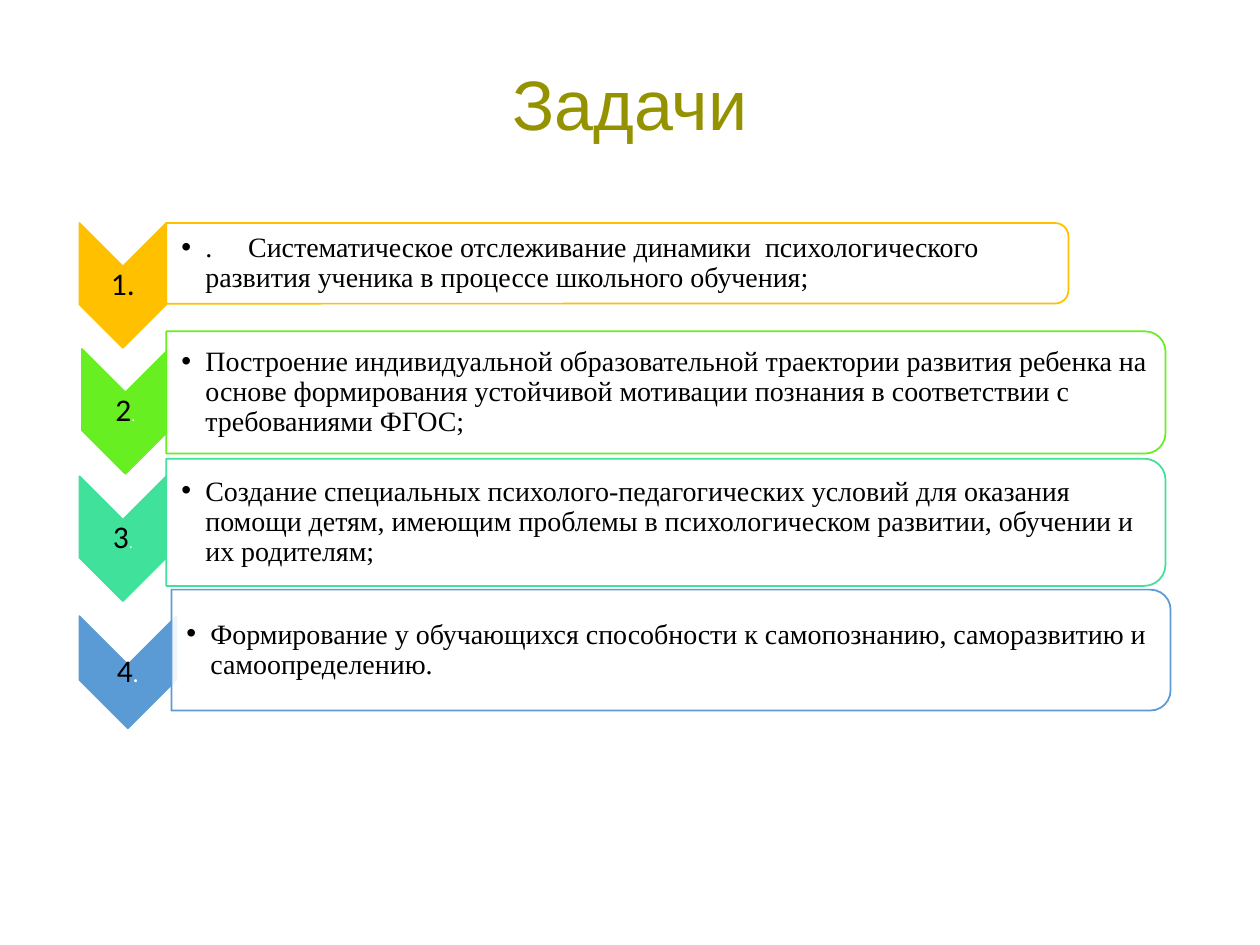
import pptx
import pptx.dml.color
import pptx.enum.shapes
import pptx.enum.text
import pptx.oxml.ns
import pptx.util
from lxml import etree

COLUMNS, ROWS = 100, 75
CELL = pptx.util.Inches(0.1)
SHAPES = pptx.enum.shapes.MSO_SHAPE
CENTER = pptx.enum.text.PP_ALIGN.CENTER
HANGING = pptx.util.Inches(0.19)

# color, chevron (column, row, width, height), panel (same), number, dot size and color, task
TASKS = [
    ("FFC000", (6.3, 17.7, 6.9, 9.9), (13.2, 17.7, 71.6, 6.4), "1", 18, "000000",
     ".\tСистематическое отслеживание динамики  психологического развития ученика "
     "в процессе школьного обучения;"),
    ("67EF21", (6.5, 27.7, 6.9, 9.9), (13.2, 26.3, 79.3, 9.7), "2", 9, "FFFFFF",
     "Построение индивидуальной образовательной траектории развития ребенка на основе "
     "формирования устойчивой мотивации познания в соответствии с требованиями ФГОС;"),
    ("3FE19B", (6.3, 37.8, 6.9, 9.9), (13.2, 36.4, 79.3, 10.1), "3", 9, "FFFFFF",
     "Создание специальных психолого-педагогических условий для оказания помощи детям, "
     "имеющим проблемы в психологическом развитии, обучении и их родителям;"),
    ("5B9BD5", (6.3, 48.9, 7.7, 8.9), (13.6, 46.8, 79.3, 9.6), "4", 14, "FFFFFF",
     "Формирование у обучающихся способности к самопознанию, саморазвитию и "
     "самоопределению."),
]


def rgb(code):
    """Return the colour for a hex string."""
    return pptx.dml.color.RGBColor.from_string(code)


def cells(*counts):
    """Turn grid counts into lengths."""
    return [round(count * CELL) for count in counts]


def add_turned(slide, preset, area, fill, line, alpha=None):
    """Add a preset turned by 90 degrees so that it covers the area."""
    left, top, width, height = area
    shift = (width - height) / 2
    shape = slide.shapes.add_shape(preset, *cells(left + shift, top - shift, height, width))
    shape.rotation = 90
    shape.shadow.inherit = False
    shape.fill.solid()
    shape.fill.fore_color.rgb = rgb(fill)
    shape.line.color.rgb = rgb(line)
    shape.line.width = pptx.util.Pt(1)
    if alpha is not None:
        color = shape.fill._xPr.find(".//" + pptx.oxml.ns.qn("a:srgbClr"))
        etree.SubElement(color, pptx.oxml.ns.qn("a:alpha"), val=str(alpha * 1000))


def add_text(slide, area, runs, font, align=None, inset=0.01):
    """Add a middle-anchored text box of (text, size, colour) runs and return its paragraph."""
    frame = slide.shapes.add_textbox(*cells(*area)).text_frame
    frame.word_wrap = True
    frame.vertical_anchor = pptx.enum.text.MSO_ANCHOR.MIDDLE
    frame.margin_left = pptx.util.Inches(inset)
    frame.margin_right = frame.margin_top = frame.margin_bottom = pptx.util.Inches(0.01)
    paragraph = frame.paragraphs[0]
    paragraph.alignment = align
    paragraph.line_spacing = 0.9
    for text, size, color in runs:
        run = paragraph.add_run()
        run.text = text
        run.font.name = font
        run.font.size = pptx.util.Pt(size)
        run.font.color.rgb = rgb(color)
    return paragraph


def add_bullet(paragraph):
    """Give the paragraph a hanging bullet and a tab stop."""
    properties = paragraph._p.get_or_add_pPr()
    properties.set("marL", str(HANGING))
    properties.set("indent", str(-HANGING))
    qn = pptx.oxml.ns.qn
    etree.SubElement(properties, qn("a:buFont"), typeface="Arial")
    etree.SubElement(properties, qn("a:buChar"), char="•")
    stops = etree.SubElement(properties, qn("a:tabLst"))
    etree.SubElement(stops, qn("a:tab"), pos=str(pptx.util.Inches(0.53)), algn="l")


def add_number(slide, area, color, runs):
    """Add a downward chevron with its number below the notch."""
    left, top, width, height = area
    add_turned(slide, SHAPES.CHEVRON, area, color, color)
    add_text(slide, (left, top + width / 2, width, height - width), runs, "Calibri", CENTER)


def add_panel(slide, area, color, task):
    """Add a panel rounded on the right with a bulleted task."""
    left, top, width, height = area
    inset = 0.05 * height
    add_turned(slide, SHAPES.ROUND_2_SAME_RECTANGLE, area, "FFFFFF", color, alpha=90)
    inner = (left, top + inset, width - inset, height - 2 * inset)
    add_bullet(add_text(slide, inner, [(task, 16, "000000")], "Times New Roman", inset=0.12))


def main():
    """Build the slide of tasks."""
    deck = pptx.Presentation()
    deck.slide_width, deck.slide_height = cells(COLUMNS, ROWS)
    slide = deck.slides.add_slide(deck.slide_layouts[6])
    add_text(slide, (6.9, 4, COLUMNS - 2 * 6.9, 9.1), [("Задачи", 40, "959200")], "Arial", CENTER)
    for color, chevron, panel, number, dot_size, dot_color, task in TASKS:
        add_number(slide, chevron, color, [(number, 18, "000000"), (".", dot_size, dot_color)])
        add_panel(slide, panel, color, task)
    deck.save("out.pptx")


if __name__ == "__main__":
    main()
